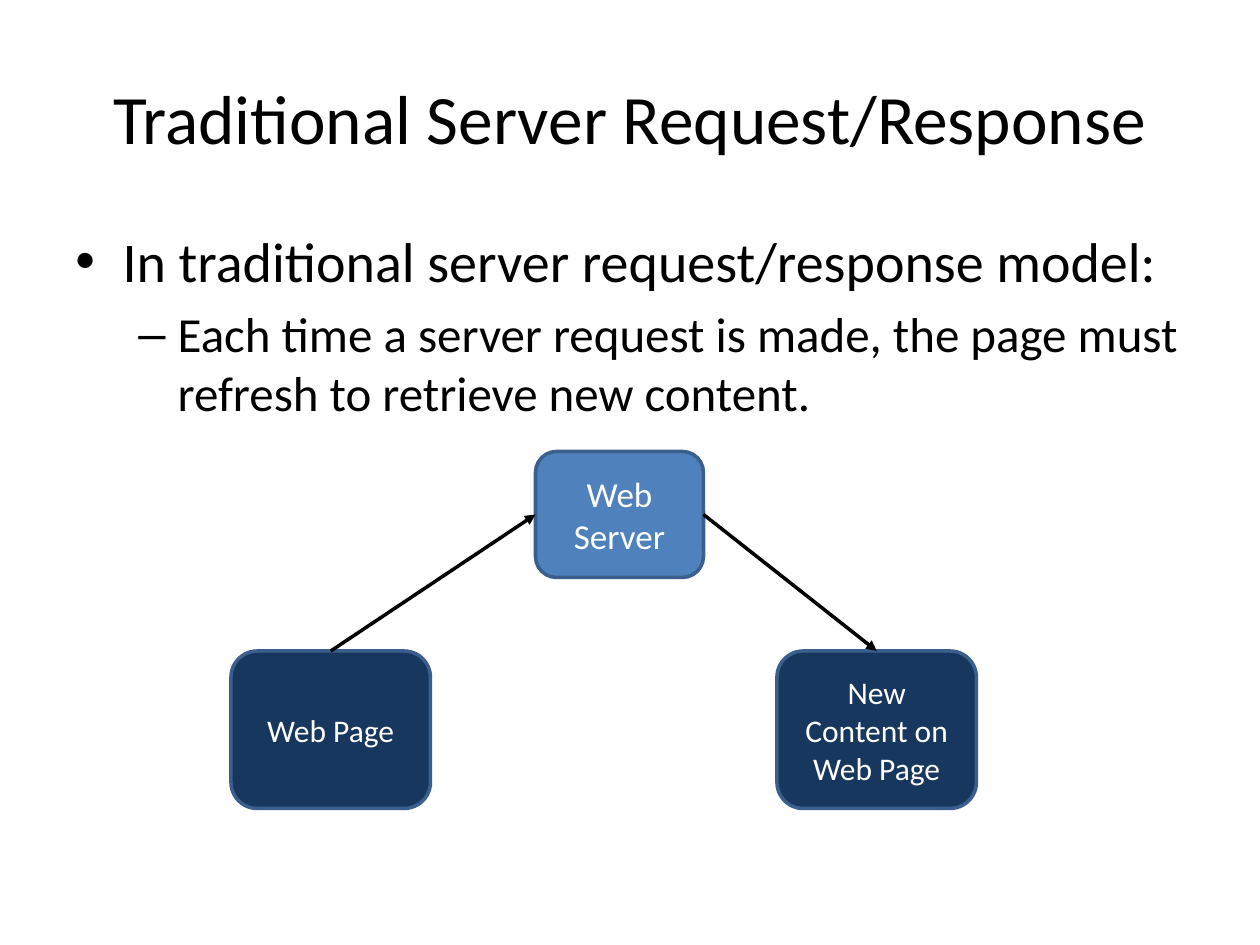
from dataclasses import dataclass

from lxml import etree
from pptx import Presentation
from pptx.dml.color import RGBColor
from pptx.enum.shapes import MSO_CONNECTOR, MSO_SHAPE
from pptx.enum.text import MSO_ANCHOR, PP_ALIGN
from pptx.oxml.ns import qn
from pptx.shapes.autoshape import Shape
from pptx.slide import Slide
from pptx.text.text import TextFrame
from pptx.util import Pt

ROUNDED = MSO_SHAPE.ROUNDED_RECTANGLE
STRAIGHT = MSO_CONNECTOR.STRAIGHT
MIDDLE, TOP = MSO_ANCHOR.MIDDLE, MSO_ANCHOR.TOP
CENTER, LEFT = PP_ALIGN.CENTER, PP_ALIGN.LEFT
TOP_SITE, LEFT_SITE, RIGHT_SITE = 0, 1, 3

FONT = "Calibri"
LINE_WIDTH = 2
COLORS = {
    "text": "000000",
    "box_text": "FFFFFF",
    "server": "4F81BD",
    "page": "17375E",
    "outline": "3A5F8C",
    "arrow": "000000",
}


@dataclass(frozen=True)
class Box:
    text: str
    left: float
    top: float
    width: float
    height: float
    fill: str
    size: float


@dataclass(frozen=True)
class Bullet:
    text: str
    mark: str
    size: float
    level: int
    margin: float
    hanging: float


SERVER = Box("Web Server", 306, 258, 96, 72, "server", 20)
OLD_PAGE = Box("Web Page", 132, 372, 114, 90, "page", 18)
NEW_PAGE = Box("New Content on Web Page", 444, 372, 114, 90, "page", 18)

BULLETS = [
    Bullet("In traditional server request/response model:", "•", 32, 0, 27, 27),
    Bullet(
        "Each time a server request is made, the page must refresh to retrieve new content.",
        "–", 28, 1, 58.5, 22.5,
    ),
]


def color(name: str) -> RGBColor:
    return RGBColor.from_string(COLORS[name])


def add_text(frame: TextFrame, text: str, size: float, color_name: str,
             alignment: PP_ALIGN, new_paragraph: bool = False):
    paragraph = frame.add_paragraph() if new_paragraph else frame.paragraphs[0]
    paragraph.alignment = alignment
    run = paragraph.add_run()
    run.text = text
    run.font.name = FONT
    run.font.size = Pt(size)
    run.font.color.rgb = color(color_name)
    return paragraph


def add_text_frame(slide: Slide, top: float, height: float, anchor: MSO_ANCHOR) -> TextFrame:
    """Add a text box across the full content width."""
    frame = slide.shapes.add_textbox(Pt(36), Pt(top), Pt(648), Pt(height)).text_frame
    frame.word_wrap = True
    frame.vertical_anchor = anchor
    return frame


def add_bullets(frame: TextFrame, bullets: list[Bullet]) -> None:
    for index, bullet in enumerate(bullets):
        paragraph = add_text(frame, bullet.text, bullet.size, "text", LEFT, index > 0)
        paragraph.level = bullet.level
        paragraph.space_before = Pt(bullet.size * 0.2)
        properties = paragraph._p.get_or_add_pPr()
        properties.set("marL", str(Pt(bullet.margin)))
        properties.set("indent", str(-Pt(bullet.hanging)))
        etree.SubElement(properties, qn("a:buFont"), typeface="Arial")
        etree.SubElement(properties, qn("a:buChar"), char=bullet.mark)


def add_box(slide: Slide, box: Box) -> Shape:
    shape = slide.shapes.add_shape(
        ROUNDED, Pt(box.left), Pt(box.top), Pt(box.width), Pt(box.height)
    )
    shape.shadow.inherit = False
    shape.fill.solid()
    shape.fill.fore_color.rgb = color(box.fill)
    shape.line.color.rgb = color("outline")
    shape.line.width = Pt(LINE_WIDTH)
    shape.text_frame.word_wrap = True
    shape.text_frame.vertical_anchor = MIDDLE
    add_text(shape.text_frame, box.text, box.size, "box_text", CENTER)
    return shape


def add_arrow(slide: Slide, start: Shape, start_site: int, end: Shape, end_site: int) -> None:
    connector = slide.shapes.add_connector(STRAIGHT, 0, 0, 0, 0)
    connector.begin_connect(start, start_site)
    connector.end_connect(end, end_site)
    connector.line.color.rgb = color("arrow")
    connector.line.width = Pt(LINE_WIDTH)
    etree.SubElement(connector.line._get_or_add_ln(), qn("a:tailEnd"), type="triangle")
    etree.SubElement(connector._element.spPr, qn("a:effectLst"))


def main() -> None:
    presentation = Presentation()
    presentation.slide_width, presentation.slide_height = Pt(720), Pt(540)
    slide = presentation.slides.add_slide(presentation.slide_layouts[6])

    title = add_text_frame(slide, 21.6, 90, MIDDLE)
    add_text(title, "Traditional Server Request/Response", 39.6, "text", CENTER)
    add_bullets(add_text_frame(slide, 126, 126, TOP), BULLETS)

    server, old_page, new_page = (add_box(slide, box) for box in (SERVER, OLD_PAGE, NEW_PAGE))
    add_arrow(slide, old_page, TOP_SITE, server, LEFT_SITE)
    add_arrow(slide, server, RIGHT_SITE, new_page, TOP_SITE)

    presentation.save("out.pptx")


if __name__ == "__main__":
    main()
